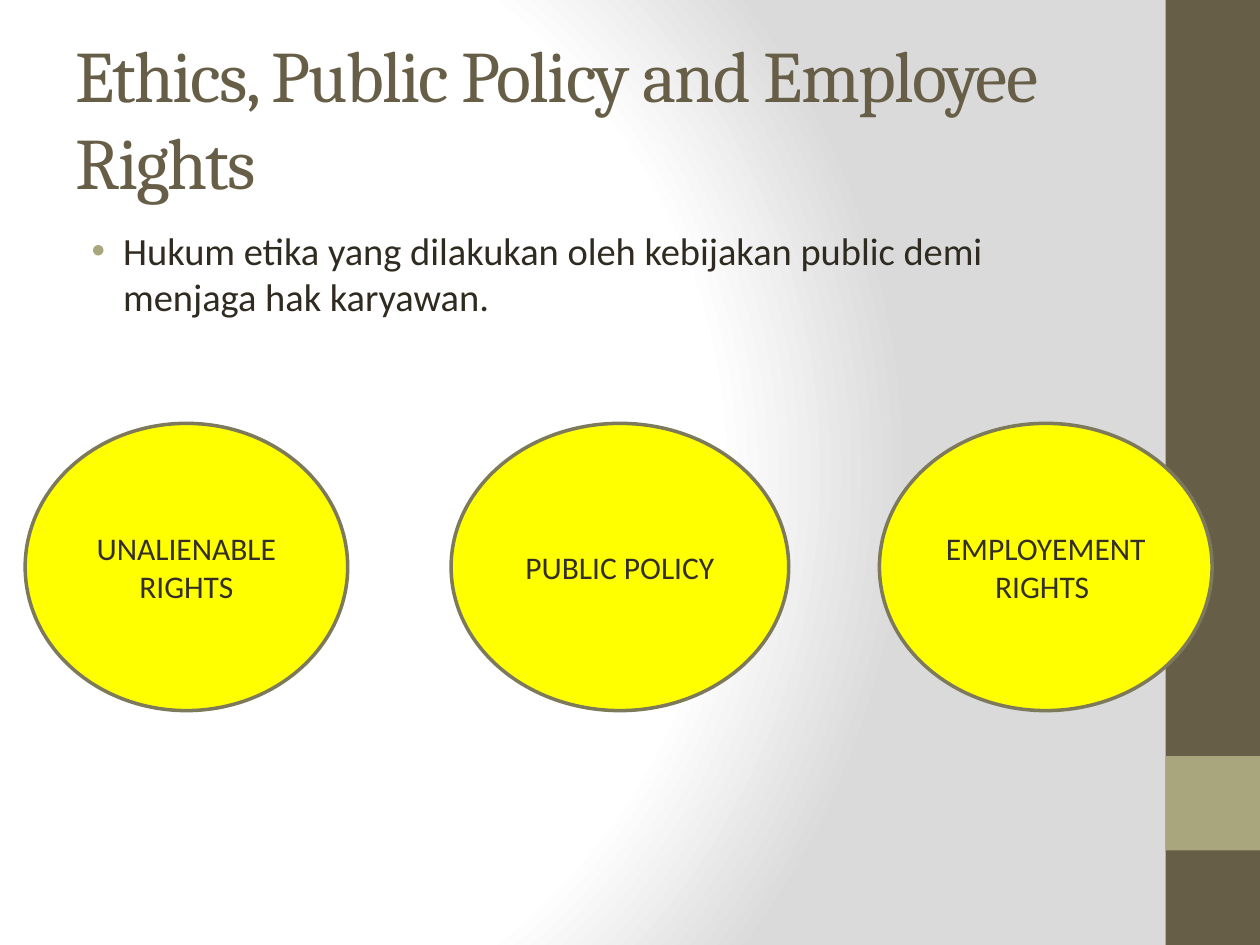
from lxml import etree
from pptx import Presentation
from pptx import util as u
from pptx.dml.color import RGBColor
from pptx.enum import shapes, text
from pptx.oxml import parse_xml
from pptx.oxml.ns import nsdecls, qn

COLORS = {
    "brown": "675E47", "olive": "A9A57C", "yellow": "FFFF00", "outline": "7D7A5C",
    "body": "2F2B20", "label": "342F24", "white": "FFFFFF", "grey": "DADADA",
}


def rgb(name):
    """Return the named colour."""
    return RGBColor.from_string(COLORS[name])


def set_background(slide):
    """Fill the background with a circular white to grey gradient."""
    slide.background.fill.gradient()
    gradient = slide.element.find(".//" + qn("a:gradFill"))
    stops = "".join(
        f'<a:gs pos="{position * 1000}"><a:srgbClr val="{COLORS[color]}"/></a:gs>'
        for position, color in ((0, "white"), (75, "white"), (100, "grey"))
    )
    gradient.getparent().replace(gradient, parse_xml(
        f'<a:gradFill {nsdecls("a")} rotWithShape="1"><a:gsLst>{stops}</a:gsLst>'
        '<a:path path="circle"><a:fillToRect l="20000" t="50000" r="100000" b="50000"/>'
        "</a:path></a:gradFill>"
    ))


def write(shape, content, font, size, color, anchor, alignment):
    """Put one styled paragraph in a shape and return it."""
    frame = shape.text_frame
    frame.text = content
    frame.word_wrap = True
    frame.vertical_anchor = anchor
    paragraph = frame.paragraphs[0]
    paragraph.alignment = alignment
    style = paragraph.runs[0].font
    style.name, style.size = font, u.Pt(size)
    style.color.rgb = rgb(color)
    return paragraph


def add_shape(slide, kind, box, fill):
    """Add a filled preset shape without outline or shadow."""
    shape = slide.shapes.add_shape(kind, *map(u.Inches, box))
    shape.shadow.inherit = False
    shape.fill.solid()
    shape.fill.fore_color.rgb = rgb(fill)
    shape.line.fill.background()
    return shape


def add_title(slide, content):
    """Add the tightly spaced title."""
    box = slide.shapes.add_textbox(*map(u.Inches, (0.5, 0.3, 8.33, 1.25)))
    paragraph = write(box, content, "Cambria", 41.4, "brown",
                      text.MSO_ANCHOR.MIDDLE, text.PP_ALIGN.LEFT)
    paragraph.runs[0].font._element.set("spc", "-100")


def add_body(slide, content):
    """Add the bulleted body text."""
    box = slide.shapes.add_textbox(*map(u.Inches, (0.5, 1.75, 8.33, 5.25)))
    paragraph = write(box, content, "Calibri", 22, "body",
                      text.MSO_ANCHOR.TOP, text.PP_ALIGN.LEFT)
    paragraph.space_before = u.Pt(4.4)
    properties = paragraph._p.get_or_add_pPr()
    properties.set("marL", str(u.Inches(0.38)))
    properties.set("indent", str(u.Inches(-0.25)))
    color = etree.SubElement(properties, qn("a:buClr"))
    etree.SubElement(color, qn("a:srgbClr"), val=COLORS["olive"])
    etree.SubElement(properties, qn("a:buFont"), typeface="Arial")
    etree.SubElement(properties, qn("a:buChar"), char="•")


def add_ellipse(slide, left, width, label):
    """Add a labelled yellow ellipse."""
    ellipse = add_shape(slide, shapes.MSO_SHAPE.OVAL, (left, 3.36, width, 2.28), "yellow")
    ellipse.line.color.rgb = rgb("outline")
    ellipse.line.width = u.Pt(2)
    write(ellipse, label, "Calibri", 18, "label",
          text.MSO_ANCHOR.MIDDLE, text.PP_ALIGN.CENTER)


def main():
    """Build and save the slide."""
    presentation = Presentation()
    presentation.slide_width, presentation.slide_height = u.Inches(10), u.Inches(7.5)
    slide = presentation.slides.add_slide(presentation.slide_layouts[6])
    set_background(slide)
    add_shape(slide, shapes.MSO_SHAPE.RECTANGLE, (9.25, 0, 0.75, 7.5), "brown")
    add_shape(slide, shapes.MSO_SHAPE.RECTANGLE, (9.25, 6, 0.75, 0.75), "olive")
    add_title(slide, "Ethics, Public Policy and Employee Rights")
    add_body(slide, "Hukum etika yang dilakukan oleh kebijakan public demi "
                    "menjaga hak karyawan.")
    for left, width, label in (
        (0.2, 2.56, "UNALIENABLE RIGHTS"),
        (3.58, 2.68, "PUBLIC POLICY"),
        (6.98, 2.64, "EMPLOYEMENT RIGHTS "),
    ):
        add_ellipse(slide, left, width, label)
    presentation.save("out.pptx")


if __name__ == "__main__":
    main()
